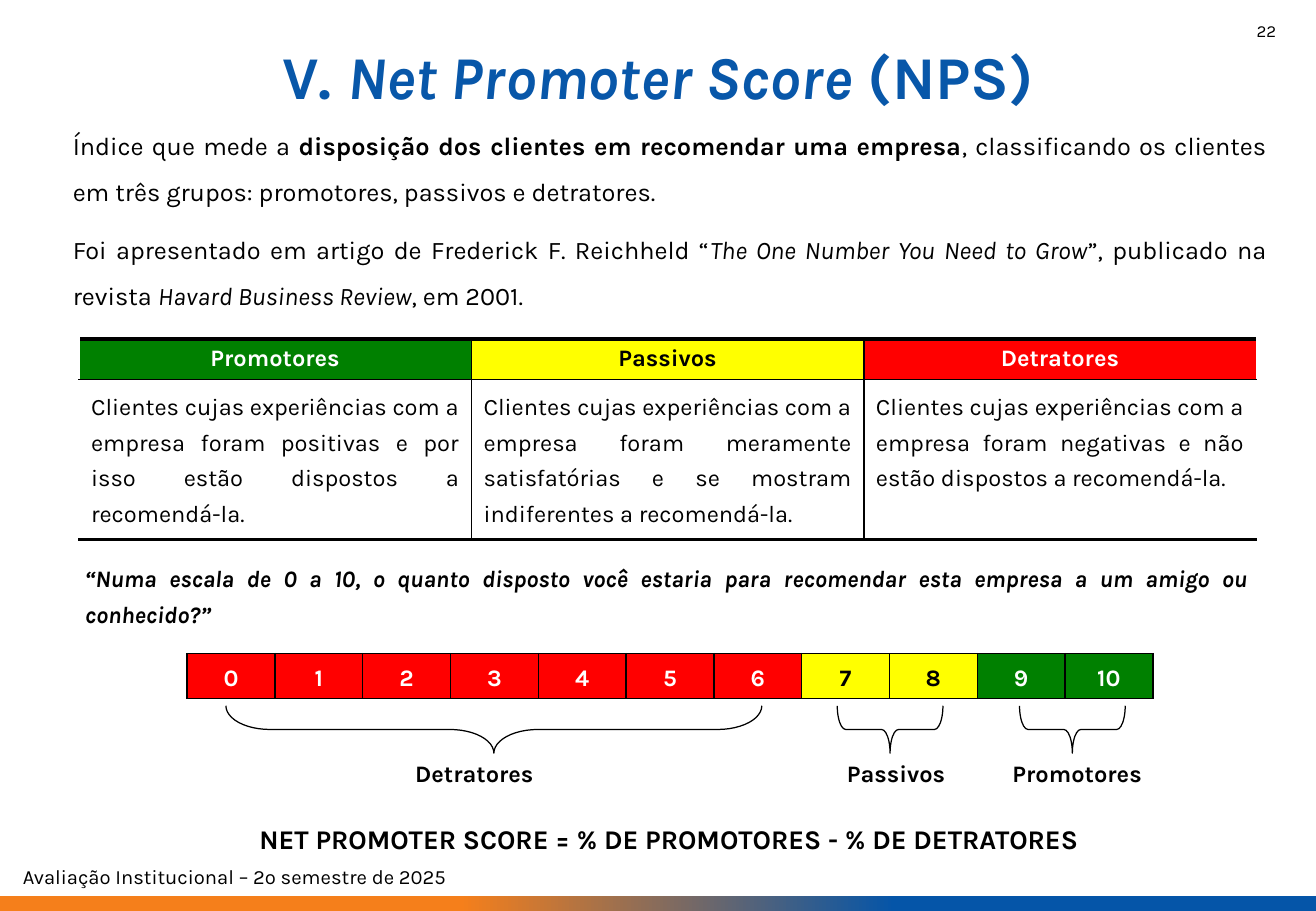
import pptx
import pptx.util
import pptx.oxml
import pptx.dml.color
import pptx.enum.shapes
import pptx.enum.text

COLORS = {"black": "000000", "white": "FFFFFF", "blue": "0857A9", "bar_blue": "0555A8",
          "orange": "F57F1B", "green": "008000", "yellow": "FFFF00", "red": "FF0000"}
ALIGN = pptx.enum.text.PP_ALIGN
ANCHOR = pptx.enum.text.MSO_ANCHOR
SHAPE = pptx.enum.shapes.MSO_SHAPE
Pt = pptx.util.Pt
BOLD = {"bold": True}
ITALIC = {"italic": True}
CENTER = {"alignment": ALIGN.CENTER}
JUSTIFY = {"alignment": ALIGN.JUSTIFY, "line_spacing": 1.3}
LOOSE = {"alignment": ALIGN.JUSTIFY, "line_spacing": 1.5}


def rgb(name):
    return pptx.dml.color.RGBColor.from_string(COLORS[name])


def assign(target, values):
    for name, value in values.items():
        setattr(target, name, value)


class Page:
    font = "Karla"

    def __init__(self, deck):
        self.width, self.height = deck.slide_width, deck.slide_height
        self.slide = deck.slides.add_slide(deck.slide_layouts[5])
        self.shapes = self.slide.shapes

    def place(self, left, top, width, height):
        return [round(share * size / 100) for share, size in
                zip((left, top, width, height), (self.width, self.height) * 2)]

    def fill_text(self, frame, paragraphs, size, layout, color="black", font=None):
        frame.word_wrap = True
        for index, spans in enumerate(paragraphs):
            para = frame.add_paragraph() if index else frame.paragraphs[0]
            assign(para, layout)
            if index:
                para.space_before = Pt(7.5)
            for text, style in spans:
                span = para.add_run()
                span.text = text
                assign(span.font, {"name": self.font, "size": Pt(size), **(font or {}), **style})
                span.font.color.rgb = rgb(color)

    def title(self, area, spans):
        box = self.shapes.title
        assign(box, dict(zip(("left", "top", "width", "height"), self.place(*area))))
        box.text_frame.auto_size = pptx.enum.text.MSO_AUTO_SIZE.NONE
        box.text_frame.vertical_anchor = ANCHOR.TOP
        self.fill_text(box.text_frame, [spans], 36, CENTER, "blue", BOLD)

    def text(self, area, paragraphs, size, layout, font=None):
        box = self.shapes.add_textbox(*self.place(*area))
        self.fill_text(box.text_frame, paragraphs, size, layout, font=font)

    def bar(self, area):
        shape = self.shapes.add_shape(SHAPE.RECTANGLE, *self.place(*area))
        shape.shadow.inherit = False
        shape.line.fill.background()
        shape.fill.gradient()
        shape.fill.gradient_angle = 0
        stops = zip(shape.fill.gradient_stops, (0.35, 0.68), ("orange", "bar_blue"))
        for stop, position, color in stops:
            stop.position = position
            stop.color.rgb = rgb(color)

    def brace(self, area, curve):
        left, top, width, height = self.place(*area)
        shift = (width - height) // 2
        shape = self.shapes.add_shape(SHAPE.LEFT_BRACE, left + shift, top - shift, height, width)
        shape.rotation = 270
        shape.adjustments[0] = curve
        shape.shadow.inherit = False
        shape.fill.background()
        shape.line.color.rgb = rgb("black")
        shape.line.width = Pt(0.75)

    def table(self, area, row_shares):
        rows, columns = len(row_shares), area[4]
        table = self.shapes.add_table(rows, columns, *self.place(*area[:4])).table
        assign(table, {"first_row": False, "horz_banding": False})
        for row, share in zip(table.rows, row_shares):
            row.height = round(share * self.height / 100)
        return table

    def cell(self, cell, text, borders, layout, fill=None, color="black", font=None):
        properties = cell._tc.get_or_add_tcPr()
        for side, points in borders.items():
            properties.append(pptx.oxml.parse_xml(
                '<a:ln%s xmlns:a="http://schemas.openxmlformats.org/drawingml/2006/main" w="%d">'
                '<a:solidFill><a:srgbClr val="%s"/></a:solidFill></a:ln%s>'
                % (side, Pt(points), COLORS["black"], side)))
        if fill:
            cell.fill.solid()
            cell.fill.fore_color.rgb = rgb(fill)
        else:
            cell.fill.background()
        self.fill_text(cell.text_frame, [[(text, {})]], 14, layout, color, font)


def main():
    deck = pptx.Presentation()
    deck.slide_width, deck.slide_height = pptx.util.Inches(10.83), pptx.util.Inches(7.5)
    page = Page(deck)
    page.bar((0, 98.4, 100, 1.6))
    page.text((0.83, 94.27, 98.34, 4), [[("Avaliação Institucional – 2º semestre de 2025", {})]],
              12, {"alignment": ALIGN.LEFT})
    page.text((76.73, 1.6, 21.14, 5.33), [[("22", {})]], 10, {"alignment": ALIGN.RIGHT})
    page.title((0, 3.6, 100, 9.33),
               [("V. ", {}), ("Net Promoter Score", ITALIC), (" (NPS)", {})])
    page.text((4.62, 12, 92.52, 23.07), [
        [("Índice que mede a ", {}),
         ("disposição dos clientes em recomendar uma empresa", BOLD),
         (", classificando os clientes em três grupos: promotores, passivos e detratores.", {})],
        [("Foi apresentado em artigo de Frederick F. Reichheld “", {}),
         ("The One Number You Need to Grow", ITALIC),
         ("”, publicado na revista ", {}),
         ("Havard Business Review", ITALIC), (", em 2001.", {})]], 15, LOOSE)

    profiles = [
        ("Promotores", "green", "white", "Clientes cujas experiências com a empresa foram "
         "positivas e por isso estão dispostos a recomendá-la."),
        ("Passivos", "yellow", "black", "Clientes cujas experiências com a empresa foram "
         "meramente satisfatórias e se mostram indiferentes a recomendá-la."),
        ("Detratores", "red", "white", "Clientes cujas experiências com a empresa foram "
         "negativas e não estão dispostos a recomendá-la.")]
    table = page.table((6, 37.2, 89.47, 22, len(profiles)), (4.45, 17.55))
    for column, (name, fill, color, meaning) in enumerate(profiles):
        sides = {"L": 1} if column else {}
        if column < len(profiles) - 1:
            sides["R"] = 1
        page.cell(table.cell(0, column), name, {**sides, "T": 2.25, "B": 1},
                  CENTER, fill, color, BOLD)
        page.cell(table.cell(1, column), meaning, {**sides, "T": 1, "B": 2.25}, JUSTIFY)

    page.text((5.54, 60.27, 90.3, 9.33), [[
        ("“Numa escala de 0 a 10, o quanto disposto você estaria para recomendar esta "
         "empresa a um amigo ou conhecido?”", {})]], 14, JUSTIFY, {**BOLD, **ITALIC})

    scale = page.table((14.22, 71.73, 73.41, 4.93, 11), (4.93,))
    for score in range(11):
        name, fill, color, meaning = profiles[2 if score < 7 else 1 if score < 9 else 0]
        cell = scale.cell(0, score)
        cell.vertical_anchor = ANCHOR.BOTTOM
        page.cell(cell, str(score), dict.fromkeys("LRTB", 1), CENTER, fill, color, BOLD)

    groups = [("Detratores", 17.17, 40.72, 0.93, 22.99), ("Passivos", 63.62, 8.03, 0.18, 55.03),
              ("Promotores", 77.47, 8.03, 0.18, 68.79)]
    for name, left, width, curve, label_left in groups:
        page.brace((left, 77.47, width, 5.2), curve)
        page.text((label_left, 82.67, 26.13, 4.4), [[(name, {})]], 14, CENTER, BOLD)
    page.text((8.68, 89.6, 84.3, 4.93),
              [[("NET PROMOTER SCORE = % DE PROMOTORES - % DE DETRATORES", {})]], 16, CENTER, BOLD)
    deck.save("out.pptx")


if __name__ == "__main__":
    main()
